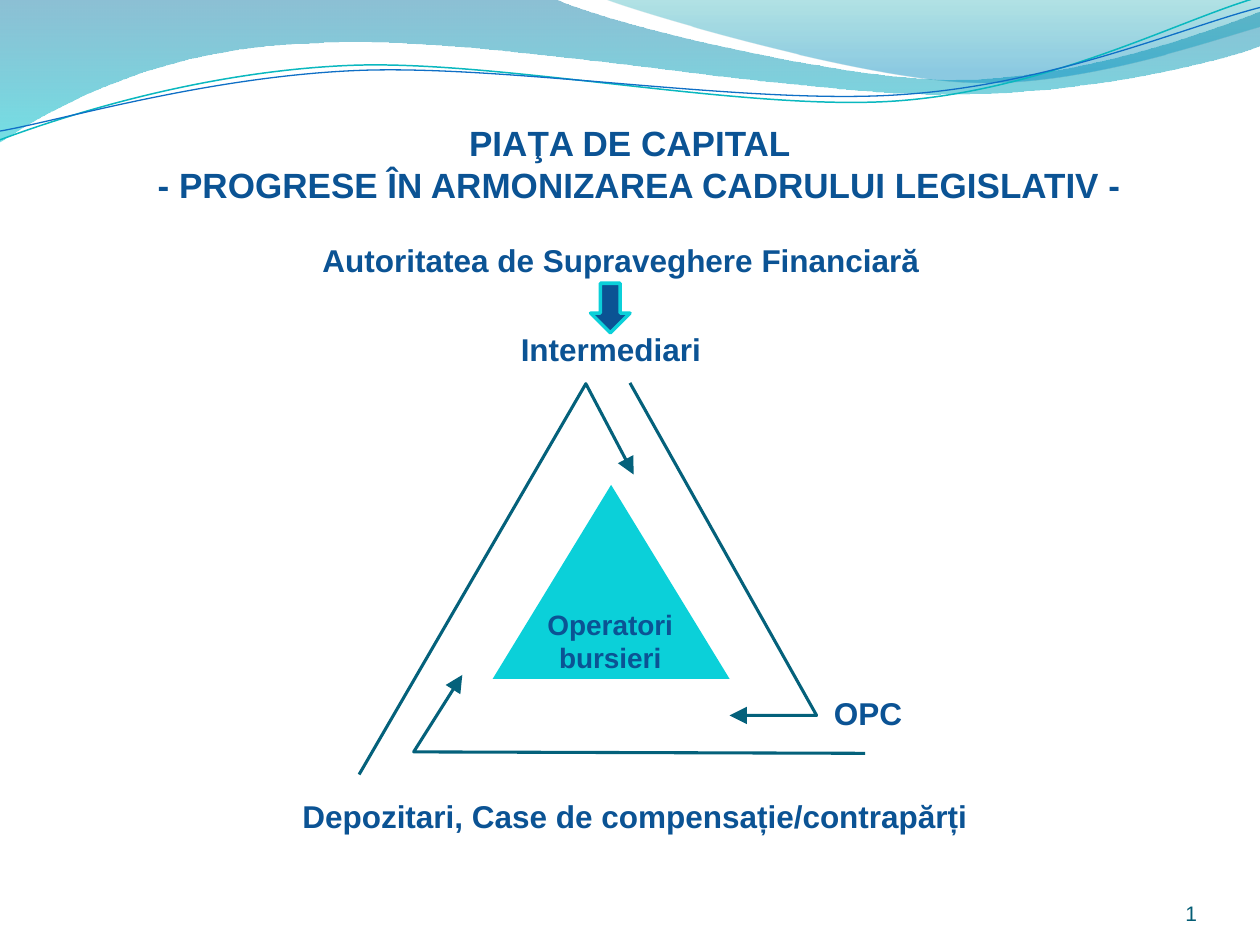
from math import cos, radians, sin

from lxml import etree
from pptx import Presentation
from pptx.dml.color import RGBColor
from pptx.enum.shapes import MSO_SHAPE
from pptx.enum.text import MSO_ANCHOR, MSO_AUTO_SIZE, PP_ALIGN
from pptx.oxml.ns import qn
from pptx.util import Pt

TRIANGLE, DOWN_ARROW = MSO_SHAPE.ISOSCELES_TRIANGLE, MSO_SHAPE.DOWN_ARROW
LEFT, CENTER, RIGHT = PP_ALIGN.LEFT, PP_ALIGN.CENTER, PP_ALIGN.RIGHT
TOP, BOTTOM = MSO_ANCHOR.TOP, MSO_ANCHOR.BOTTOM
GROW, FIXED = MSO_AUTO_SIZE.SHAPE_TO_FIT_TEXT, MSO_AUTO_SIZE.NONE

NAVY = RGBColor(0x0B, 0x53, 0x94)
CYAN = RGBColor(0x0B, 0xD0, 0xD9)
PETROL = RGBColor(0x04, 0x61, 0x7B)
NUMBER_COLOR = RGBColor(0x04, 0x5D, 0x75)
WAVE_TEAL = RGBColor(0x0A, 0xB8, 0xBF)
WAVE_BLUE = RGBColor(0x0F, 0x6F, 0xC6)
# Gradient stops: position, colour, opacity in percent
BAND_STOPS = [(0, RGBColor(0x00, 0x74, 0xA1), 45), (1, RGBColor(0x00, 0xC6, 0xCF), 55)]
GLOW_STOPS = [(0, RGBColor(0x00, 0xA1, 0xA9), 30), (0.8, RGBColor(0x00, 0x8B, 0xBF), 45)]
WAVE_TILT = 357.3


def add_text(shapes, text, left, top, width, height, size=18, color=NAVY, bold=True,
             align=LEFT, anchor=TOP, inset=True, spacing=None, auto_size=GROW):
    box = shapes.add_textbox(Pt(left), Pt(top), Pt(width), Pt(height))
    frame = box.text_frame
    frame.word_wrap = True
    frame.auto_size = auto_size
    frame.vertical_anchor = anchor
    if not inset:
        frame.margin_left = frame.margin_top = frame.margin_right = frame.margin_bottom = 0
    for index, line in enumerate(text.split("\n")):
        paragraph = frame.add_paragraph() if index else frame.paragraphs[0]
        paragraph.alignment = align
        paragraph.line_spacing = spacing
        run = paragraph.add_run()
        run.text = line
        run.font.name = "Arial"
        run.font.size = Pt(size)
        run.font.bold = bold
        run.font.color.rgb = color


def style_shape(shape, fill=None, line=None, line_width=1):
    shape.shadow.inherit = False
    if fill is None:
        shape.fill.background()
    else:
        shape.fill.solid()
        shape.fill.fore_color.rgb = fill
    if line is None:
        shape.line.fill.background()
    else:
        shape.line.color.rgb = line
        shape.line.width = Pt(line_width)


def add_outline(shapes, start, segments, close=False):
    """Draw segments of one point (line) or three points (cubic curve)."""
    points = [(Pt(x), Pt(y)) for segment in segments for x, y in segment]
    builder = shapes.build_freeform(Pt(start[0]), Pt(start[1]), scale=1.0)
    builder.add_line_segments(points, close=close)
    shape = builder.convert_to_shape()
    steps = iter(list(shape.element.iter(qn("a:lnTo"))))
    for segment in segments:
        first, *others = [next(steps) for _ in segment]
        if others:
            first.tag = qn("a:cubicBezTo")
            for other in others:
                first.append(other[0])
                other.getparent().remove(other)
    return shape


def fill_gradient(shape, stops):
    """Fill from top to bottom with two partly transparent stops."""
    shape.fill.gradient()
    shape.fill.gradient_angle = 270
    for gradient_stop, (position, color, _) in zip(shape.fill.gradient_stops, stops):
        gradient_stop.position = position
        gradient_stop.color.rgb = color
    for element, stop in zip(shape.element.spPr.iter(qn("a:srgbClr")), stops):
        etree.SubElement(element, qn("a:alpha"), val=str(stop[2] * 1000))


def turn(point, center, degrees):
    angle = radians(degrees)
    x, y = point[0] - center[0], point[1] - center[1]
    return (center[0] + x * cos(angle) - y * sin(angle),
            center[1] + x * sin(angle) + y * cos(angle))


def add_wave_line(shapes, center, start, curves, color, width):
    """Draw the curve level, then tilt it about the center of its box."""
    level_curves = [[turn(point, center, -WAVE_TILT) for point in curve] for curve in curves]
    wave = add_outline(shapes, turn(start, center, -WAVE_TILT), level_curves)
    style_shape(wave, line=color, line_width=width)
    wave.rotation = WAVE_TILT


def add_wave_header(slide):
    band = add_outline(slide.shapes, (0, 0), [
        [(316.8, -0.7)],
        [(342.7, 12.2), (478.1, 45.4), (545.8, 45.4)],
        [(614.2, 45.4), (689.8, 18.7), (720, 6.5)],
        [(720.7, 25.9)],
        [(707.8, 31.7), (626.4, 54.7), (537.1, 54)],
        [(447.8, 54), (275, 20.2), (185, 24.5)],
        [(92.9, 25.9), (33.1, 59.8), (-0.7, 81.4)],
        [(0, 0)]], close=True)
    glow = add_outline(slide.shapes, (344.9, -0.7), [
        [(366.5, 7.9), (491, 44.6), (553.7, 46.8)],
        [(616.3, 49.7), (691.9, 23), (720, 15.1)],
        [(720, 0)],
        [(344.9, -0.7)]], close=True)
    for shape, stops in ((band, BAND_STOPS), (glow, GLOW_STOPS)):
        style_shape(shape)
        fill_gradient(shape, stops)

    lines = slide.shapes.add_group_shape().shapes
    add_wave_line(lines, (359.3, 41.4), (0, 79.9), [
        [(34.6, 67), (113.8, 41), (199.4, 37.4)],
        [(284.4, 33.8), (427, 64.1), (513.4, 57.6)],
        [(599.8, 51.1), (675.4, 10.8), (718.6, -1.4)]], WAVE_TEAL, 0.85)
    add_wave_line(lines, (359.6, 42.5), (0, 74.9), [
        [(33.8, 69.1), (118.1, 43.9), (203.8, 40.3)],
        [(290.2, 36.7), (429.8, 60.5), (516.2, 54)],
        [(601.9, 48.2), (677.5, 15.1), (720, 4.3)]], WAVE_BLUE, 0.75)


def add_bent_arrow(shapes, start, bend, end):
    arrow = add_outline(shapes, start, [[bend], [end]])
    style_shape(arrow, line=PETROL, line_width=1.75)
    etree.SubElement(arrow.element.spPr.find(qn("a:ln")), qn("a:tailEnd"),
                     type="triangle", w="lg", len="lg")


def add_market_diagram(slide, left, top):
    group = slide.shapes.add_group_shape().shapes
    triangle = group.add_shape(TRIANGLE, Pt(left + 108.7), Pt(top + 137.5),
                               Pt(135.4), Pt(110.9))
    style_shape(triangle, fill=CYAN)

    for points in (
        [(32.4, 303), (162, 79.7), (189.3, 131.6)],
        [(321.6, 290.9), (63.6, 290.1), (91.4, 246.1)],
        [(187.2, 79.2), (293.9, 269.2), (244.1, 269.2)],
    ):
        add_bent_arrow(group, *[(left + x, top + y) for x, y in points])

    for text, x, y, width in (
        ("Intermediari", 124.8, 51.1, 127.4),
        ("OPC", 303.8, 259, 48.2),
        ("Depozitari, Case de compensație/contrapărți", 0, 317.5, 391),
        ("Autoritatea de Supraveghere Financiară", 11.5, 0, 345.6),
    ):
        add_text(group, text, left + x, top + y, width, 20.2, inset=False, spacing=0.93)
    add_text(slide.shapes, "Operatori bursieri", left + 124.8, top + 203.8, 102.2, 46.1,
             size=16, align=CENTER)

    down_arrow = slide.shapes.add_shape(DOWN_ARROW, Pt(left + 164.7), Pt(top + 22.3),
                                        Pt(22.5), Pt(28.3))
    style_shape(down_arrow, fill=NAVY, line=CYAN, line_width=2)


def main():
    presentation = Presentation()
    presentation.slide_width, presentation.slide_height = Pt(720), Pt(540)
    slide = presentation.slides.add_slide(presentation.slide_layouts[6])
    add_wave_header(slide)
    add_text(slide.shapes, "1", 624.2, 500.4, 59.8, 28.8, size=12, color=NUMBER_COLOR,
             bold=False, align=RIGHT, anchor=BOTTOM, inset=False, auto_size=FIXED)
    add_text(slide.shapes,
             "PIAŢA DE CAPITAL \n - PROGRESE ÎN ARMONIZAREA CADRULUI LEGISLATIV -",
             76.3, 65.9, 572.4, 55.4, size=20, align=CENTER)
    add_market_diagram(slide, 172.8, 139.6)
    presentation.save("out.pptx")


if __name__ == "__main__":
    main()
